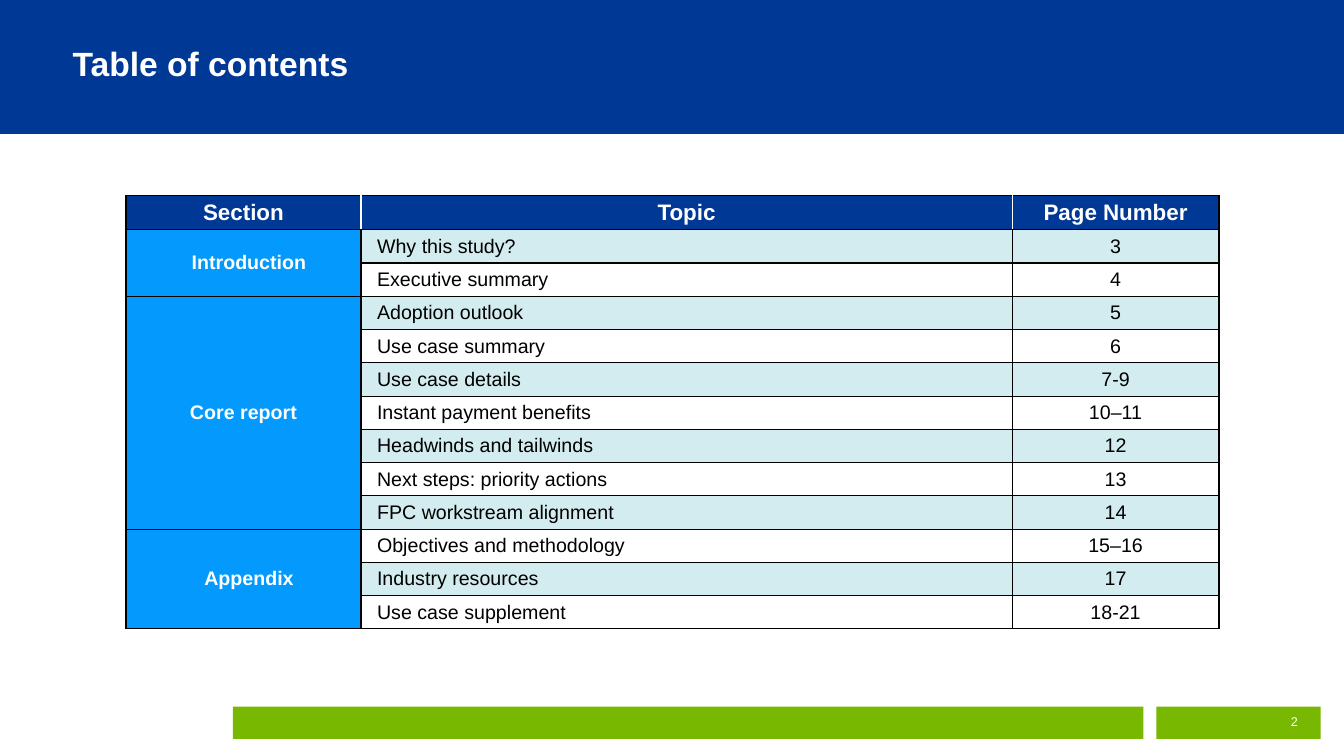
from dataclasses import dataclass

from lxml.etree import SubElement
from pptx import Presentation
from pptx.dml.color import RGBColor
from pptx.enum.shapes import MSO_SHAPE
from pptx.enum.text import MSO_ANCHOR, PP_ALIGN
from pptx.oxml import parse_xml
from pptx.oxml.ns import qn
from pptx.util import Pt

SCALE = 9144
NAMESPACE = "http://schemas.openxmlformats.org/drawingml/2006/main"


@dataclass(frozen=True)
class Theme:
    font: str = "Arial"
    navy: str = "003896"
    green: str = "79B800"
    sky: str = "0399FD"
    mist: str = "ABDBE2"
    white: str = "FFFFFF"
    black: str = "000000"
    title_size: int = 24
    heading_size: int = 16
    cell_size: int = 14
    number_size: int = 9


THEME = Theme()
HEADINGS = ["Section", "Topic", "Page Number"]
SECTIONS = [
    ("Introduction", 11, [("Why this study?", "3"), ("Executive summary", "4")]),
    ("Core report", 0, [
        ("Adoption outlook", "5"),
        ("Use case summary", "6"),
        ("Use case details", "7-9"),
        ("Instant payment benefits", "10–11"),
        ("Headwinds and tailwinds", "12"),
        ("Next steps: priority actions", "13"),
        ("FPC workstream alignment", "14"),
    ]),
    ("Appendix", 11, [
        ("Objectives and methodology", "15–16"),
        ("Industry resources", "17"),
        ("Use case supplement", "18-21"),
    ]),
]


def px(length):
    return length * SCALE


def write_text(frame, text, *, size, color, bold=False, align=PP_ALIGN.LEFT):
    para = frame.paragraphs[0]
    para.alignment = align
    span = para.add_run()
    span.text = text
    span.font.name = THEME.font
    span.font.size = Pt(size)
    span.font.bold = bold
    span.font.color.rgb = RGBColor.from_string(color)


def add_band(page, box, color):
    band = page.shapes.add_shape(MSO_SHAPE.RECTANGLE, *map(px, box))
    band.shadow.inherit = False
    band.fill.solid()
    band.fill.fore_color.rgb = RGBColor.from_string(color)
    band.line.fill.background()
    return band


def add_header(page, box, text):
    left, top, width, height = box
    band = add_band(page, box, THEME.navy)
    title = page.shapes.title
    band.element.addnext(title.element)
    title.left, title.top = px(left + 62), px(top + 38)
    title.width, title.height = px(646), px(58)
    title.text_frame.word_wrap = True
    title.text_frame.vertical_anchor = MSO_ANCHOR.TOP
    write_text(title.text_frame, text, size=THEME.title_size,
               color=THEME.white, bold=True)


def add_footer(page, box, number):
    left, top, width, height = box
    number_width, gap = 163, 13
    number_left = left + width - number_width
    add_band(page, (left, top, width - number_width - gap, height), THEME.green)
    add_band(page, (number_left, top, number_width, height), THEME.green)
    label = page.shapes.add_textbox(px(number_left), px(top - 5), px(150), px(40))
    frame = label.text_frame
    frame.word_wrap = True
    frame.vertical_anchor = MSO_ANCHOR.MIDDLE
    write_text(frame, number, size=THEME.number_size, color=THEME.white,
               align=PP_ALIGN.RIGHT)


def set_borders(cell, left, right):
    properties = cell._tc.get_or_add_tcPr()
    edges = {"lnL": left, "lnR": right, "lnT": THEME.black, "lnB": THEME.black}
    for position, (edge, color) in enumerate(edges.items()):
        properties.insert(position, parse_xml(
            f'<a:{edge} xmlns:a="{NAMESPACE}" w="{Pt(1)}"><a:solidFill>'
            f'<a:srgbClr val="{color}"/></a:solidFill></a:{edge}>'))


def set_fill(cell, color, opacity=100):
    if color is None:
        cell.fill.background()
        return
    cell.fill.solid()
    cell.fill.fore_color.rgb = RGBColor.from_string(color)
    if opacity < 100:
        tint = cell._tc.tcPr.find(qn("a:solidFill")).find(qn("a:srgbClr"))
        SubElement(tint, qn("a:alpha")).set("val", str(opacity * 1000))


def fill_cell(cell, text, *, indent=0, **text_format):
    cell.vertical_anchor = MSO_ANCHOR.MIDDLE
    cell.margin_left = px(indent)
    cell.margin_right = cell.margin_top = cell.margin_bottom = 0
    write_text(cell.text_frame, text, **text_format)


def add_contents(page, box):
    topic_count = sum(len(topics) for _, _, topics in SECTIONS)
    table = page.shapes.add_table(topic_count + 1, 3, *map(px, box)).table
    table.first_row = table.horz_banding = False
    for column, width in zip(table.columns, (233, 646, 205)):
        column.width = px(width)
    for index, row in enumerate(table.rows):
        row.height = px(33 if index else 34)
        for column, cell in enumerate(row.cells):
            inner = THEME.black if index else THEME.white
            set_borders(cell, inner if column else THEME.black,
                        inner if column < 2 else THEME.black)

    for column, heading in enumerate(HEADINGS):
        cell = table.cell(0, column)
        set_fill(cell, THEME.navy)
        fill_cell(cell, heading, size=THEME.heading_size, color=THEME.white,
                  bold=True, align=PP_ALIGN.CENTER)

    row = 1
    for section, indent, topics in SECTIONS:
        section_cell = table.cell(row, 0)
        section_cell.merge(table.cell(row + len(topics) - 1, 0))
        set_fill(section_cell, THEME.sky)
        fill_cell(section_cell, section, indent=indent, size=THEME.cell_size,
                  color=THEME.white, bold=True, align=PP_ALIGN.CENTER)
        for topic, number in topics:
            topic_cell, number_cell = table.cell(row, 1), table.cell(row, 2)
            for cell in (topic_cell, number_cell):
                set_fill(cell, THEME.mist if row % 2 else None, opacity=52)
            fill_cell(topic_cell, topic, indent=16, size=THEME.cell_size,
                      color=THEME.black)
            fill_cell(number_cell, number, size=THEME.cell_size,
                      color=THEME.black, align=PP_ALIGN.CENTER)
            row += 1


def main():
    deck = Presentation()
    deck.slide_width, deck.slide_height = px(1333), px(750)
    page = deck.slides.add_slide(deck.slide_layouts[5])
    add_header(page, (0, 0, 1333, 133), "Table of contents")
    add_footer(page, (231, 701, 1079, 32), "2")
    add_contents(page, (125, 194, 1084, 430))
    deck.save("out.pptx")


if __name__ == "__main__":
    main()
